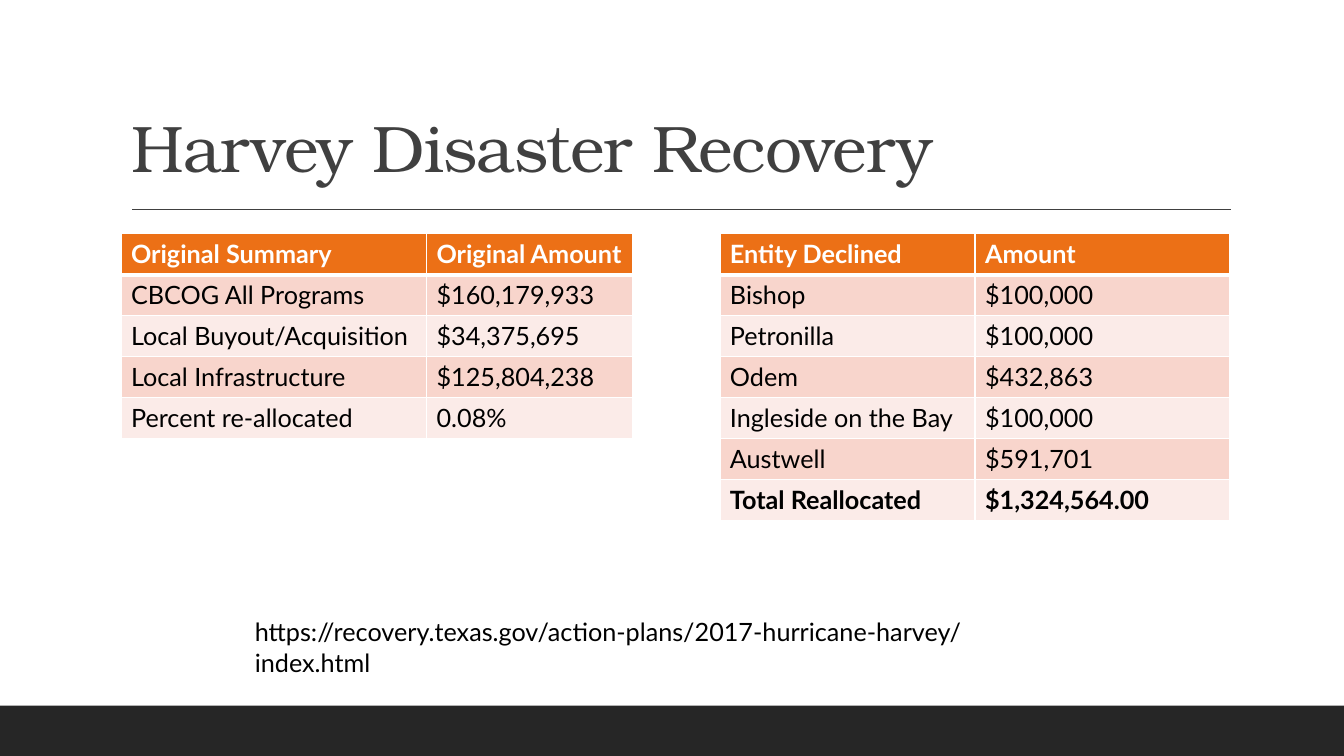
"""Build the Harvey Disaster Recovery slide with its two funding tables."""
from lxml.etree import SubElement
from pptx import Presentation
from pptx.dml.color import RGBColor
from pptx.enum.shapes import MSO_CONNECTOR as Connector, MSO_SHAPE as Shape
from pptx.enum.text import MSO_ANCHOR as Anchor, MSO_AUTO_SIZE as AutoSize, PP_ALIGN as Align
from pptx.oxml.ns import qn
from pptx.util import Inches, Pt

TITLE = "Harvey Disaster Recovery"
ADDRESS = "https://recovery.texas.gov/action-plans/2017-hurricane-harvey/index.html"
TABLES = [
    {
        "left": 1.2,
        "columns": (3.03, 2.04),
        "has_total": False,
        "rows": [
            ("Original Summary", "Original Amount"),
            ("CBCOG All Programs", "$160,179,933"),
            ("Local Buyout/Acquisition", "$34,375,695"),
            ("Local Infrastructure", "$125,804,238"),
            ("Percent re-allocated", "0.08%"),
        ],
    },
    {
        "left": 7.14,
        "columns": (2.53, 2.53),
        "has_total": True,
        "rows": [
            ("Entity Declined", "Amount"),
            ("Bishop", "$100,000"),
            ("Petronilla", "$100,000"),
            ("Odem", "$432,863"),
            ("Ingleside on the Bay", "$100,000"),
            ("Austwell", "$591,701"),
            ("Total Reallocated", "$1,324,564.00"),
        ],
    },
]
TABLE_TOP, ROW_HEIGHT = 2.32, 0.406
HEADER_FILL, BANDS = "EC7016", ("FBEBE8", "F8D5CC")
WHITE, BLACK, GREY, DARK = "FFFFFF", "000000", "404040", "262626"
BODY_FONT, TITLE_FONT = "Lato", "TeX Gyre Bonum"


def color(value):
    return RGBColor.from_string(value)


def apply(target, values):
    for name, value in values.items():
        setattr(target, name, value)


def write(frame, text, ink, size=18, font=BODY_FONT, bold=False):
    para = frame.paragraphs[0]
    para.alignment = Align.LEFT
    span = para.add_run()
    span.text = text
    apply(span.font, {"name": font, "size": Pt(size), "bold": bold})
    span.font.color.rgb = color(ink)
    return para, span


def add_borders(cell, widths):
    properties = cell._tc.get_or_add_tcPr()
    for side, width in widths.items():
        line = SubElement(properties, qn(f"a:ln{side}"), w=str(Pt(width)))
        fill = SubElement(line, qn("a:solidFill"))
        SubElement(fill, qn("a:srgbClr"), val=WHITE)


def add_funding_table(page, left, columns, has_total, rows):
    table = page.shapes.add_table(
        len(rows), len(columns), Inches(left), Inches(TABLE_TOP),
        Inches(sum(columns)), Inches(ROW_HEIGHT * len(rows))).table
    for column, width in zip(table.columns, columns):
        column.width = Inches(width)
    for r, row in enumerate(rows):
        table.rows[r].height = Inches(ROW_HEIGHT)
        header = r == 0
        bold = header or (has_total and r == len(rows) - 1)
        widths = {"L": 1, "R": 1, "T": 3 if r == 1 else 1, "B": 3 if header else 1}
        for c, text in enumerate(row):
            cell = table.cell(r, c)
            add_borders(cell, widths)
            cell.fill.solid()
            cell.fill.fore_color.rgb = color(HEADER_FILL if header else BANDS[r % 2])
            write(cell.text_frame, text, WHITE if header else BLACK, bold=bold)


def add_frame(page):
    band = page.shapes.add_shape(
        Shape.RECTANGLE, 0, Inches(7), Inches(13.33), Inches(0.5))
    band.shadow.inherit = False
    band.fill.solid()
    band.fill.fore_color.rgb = color(DARK)
    band.line.fill.background()
    rule = page.shapes.add_connector(
        Connector.STRAIGHT, Inches(1.31), Inches(2.08), Inches(12.21), Inches(2.08))
    rule.line.color.rgb = color(GREY)
    rule.line.width = Pt(1)
    SubElement(rule._element.spPr, qn("a:effectLst"))


def add_title(page):
    title = page.shapes.title
    apply(title, {"left": Inches(1.2), "top": Inches(0.31),
                  "width": Inches(11), "height": Inches(1.59)})
    apply(title.text_frame, {"vertical_anchor": Anchor.BOTTOM,
                             "auto_size": AutoSize.NONE, "word_wrap": True})
    para, span = write(title.text_frame, TITLE, GREY, 47, TITLE_FONT)
    para.line_spacing = 0.9
    span.font._element.set("spc", "-50")


def add_address(page):
    box = page.shapes.add_textbox(Inches(2.43), Inches(6.07), Inches(8.14), Inches(0.4))
    box.text_frame.word_wrap = True
    write(box.text_frame, ADDRESS, BLACK)


def main():
    deck = Presentation()
    apply(deck, {"slide_width": Inches(13.33), "slide_height": Inches(7.5)})
    page = deck.slides.add_slide(deck.slide_layouts[5])
    add_frame(page)
    add_title(page)
    for content in TABLES:
        add_funding_table(page, **content)
    add_address(page)
    deck.save("out.pptx")


if __name__ == "__main__":
    main()
